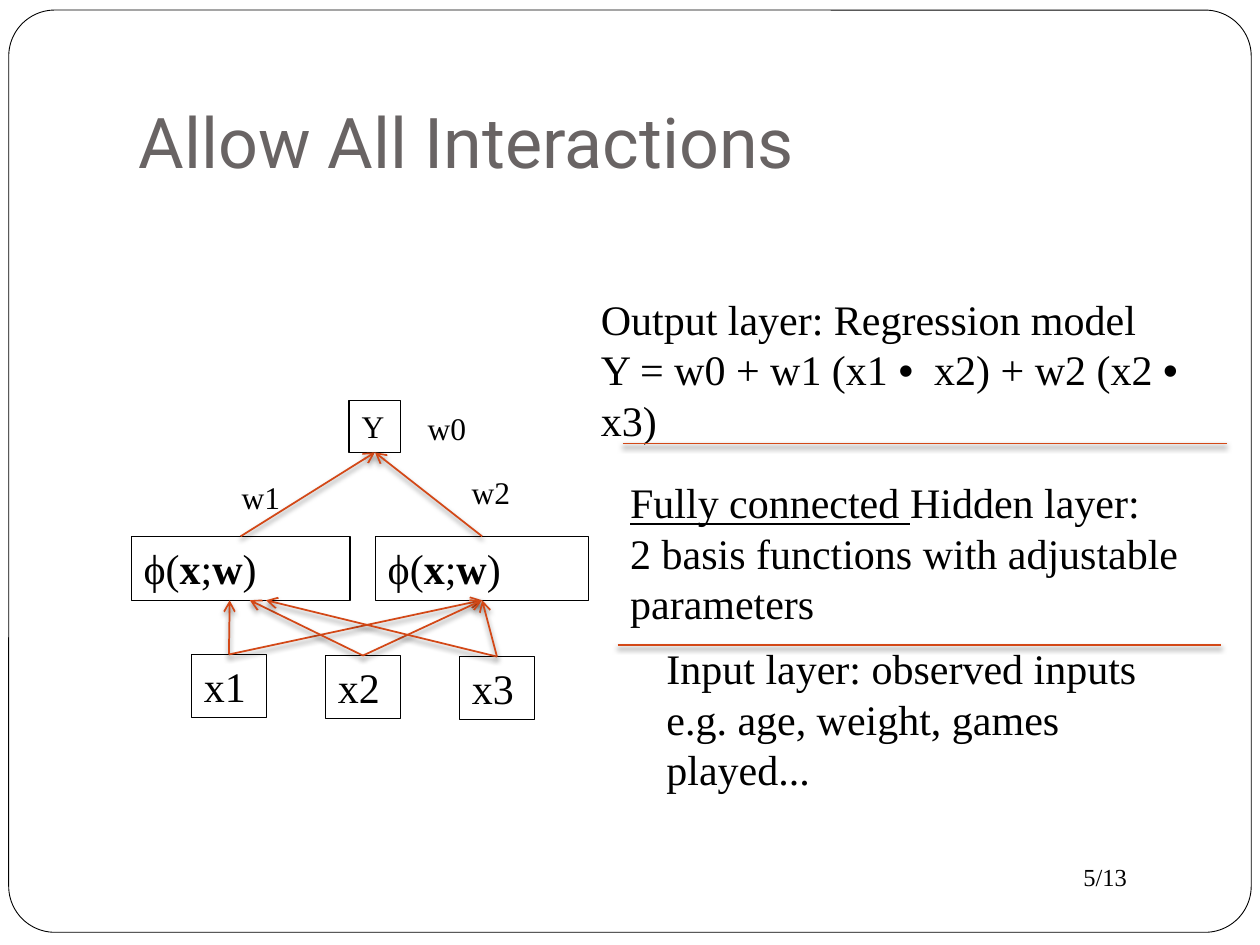
import pptx
import pptx.util
import pptx.dml.color
import pptx.enum.shapes
import pptx.enum.text
import pptx.oxml

Pt = pptx.util.Pt
SHAPE = pptx.enum.shapes.MSO_SHAPE
ANCHOR = pptx.enum.text.MSO_ANCHOR
NS = 'xmlns:a="http://schemas.openxmlformats.org/drawingml/2006/main"'
SHADOW = (f'<a:effectLst {NS}><a:outerShdw blurRad="38100" dist="25400" dir="5400000" '
          'rotWithShape="0"><a:srgbClr val="000000"><a:alpha val="50000"/></a:srgbClr>'
          '</a:outerShdw></a:effectLst>')
ARROW = f'<a:tailEnd {NS} type="arrow"/>'

BLACK, WHITE, GREY, ORANGE = "000000", "FFFFFF", "696464", "D34817"
SERIF = {"name": "Times New Roman", "size": Pt(24)}
SMALL = {"size": Pt(18)}
BOLD = {"bold": True}
BULLET = ("•", {"name": "Arial"})
PHI = [[("ϕ(", {}), ("x", BOLD), (";", {}), ("w", BOLD), (")", {})]]


def rgb(value):
    return pptx.dml.color.RGBColor.from_string(value)


def set_attrs(obj, values):
    for name, value in values.items():
        setattr(obj, name, value)


def write(tf, paragraphs, fmt=None, color=BLACK):
    """Each paragraph is a list of (text, format) runs; \\n is a line break."""
    for i, runs in enumerate(paragraphs):
        p = tf.paragraphs[0] if i == 0 else tf.add_paragraph()
        for text, own in runs:
            for j, part in enumerate(text.split("\n")):
                if j:
                    p.add_line_break()
                r = p.add_run()
                r.text = part
                set_attrs(r.font, {**SERIF, **(fmt or {}), **own})
                r.font.color.rgb = rgb(color)


def plain(*lines):
    return [[(line, {})] for line in lines]


def add_label(s, x, y, w, h, paragraphs, fmt=None):
    sp = s.shapes.add_textbox(Pt(x), Pt(y), Pt(w), Pt(h))
    sp.text_frame.word_wrap = True
    write(sp.text_frame, paragraphs, fmt)


def add_node(s, x, y, w, h, paragraphs, fmt=None):
    sp = s.shapes.add_textbox(Pt(x), Pt(y), Pt(w), Pt(h))
    set_attrs(sp.line, {"width": Pt(0.75)})
    sp.line.color.rgb = rgb(BLACK)
    sp.text_frame.word_wrap = True
    write(sp.text_frame, paragraphs, fmt)
    return sp


def add_line(s, x1, y1, x2, y2, arrow=False):
    c = s.shapes.add_connector(pptx.enum.shapes.MSO_CONNECTOR.STRAIGHT,
                               Pt(x1), Pt(y1), Pt(x2), Pt(y2))
    c.line.width = Pt(1)
    c.line.color.rgb = rgb(ORANGE)
    if arrow:
        c.line._get_or_add_ln().append(pptx.oxml.parse_xml(ARROW))
    c._element.spPr.append(pptx.oxml.parse_xml(SHADOW))
    return c


def add_arrow(s, source, target, end=None):
    """Arrow from a top middle to a bottom middle, or to a free end point."""
    c = add_line(s, 0, 0, *(end or (0, 0)), arrow=True)
    c.begin_connect(source, 0)
    if end is None:
        c.end_connect(target, 2)


def add_frame(s):
    sp = s.shapes.add_shape(SHAPE.ROUNDED_RECTANGLE, Pt(5), Pt(5.75), Pt(710), Pt(527))
    sp.adjustments[0] = 0.05
    sp.shadow.inherit = False
    sp.fill.solid()
    sp.fill.fore_color.rgb = rgb(WHITE)
    sp.line.width = Pt(0.5)
    sp.line.color.rgb = rgb(BLACK)
    # The frame goes behind the title
    s.shapes._spTree.insert(2, sp._element)


def add_title(s, text):
    sp = s.shapes.title
    set_attrs(sp, {"left": Pt(72), "top": Pt(21.6), "width": Pt(612), "height": Pt(90)})
    tf = sp.text_frame
    set_attrs(tf, {"margin_left": Pt(7.2), "margin_top": Pt(3.6), "margin_right": Pt(7.2),
                   "margin_bottom": Pt(7.2), "vertical_anchor": ANCHOR.BOTTOM,
                   "word_wrap": True})
    write(tf, plain(text), {"name": "Roboto", "size": Pt(40)}, GREY)
    tf.paragraphs[0].alignment = pptx.enum.text.PP_ALIGN.LEFT


def add_layer_notes(s):
    add_label(s, 336.25, 164.2, 376, 87, [[
        ("Output layer: Regression model \nY = w0 + w1 (x1 ", {}), BULLET,
        ("  x2) + w2 (x2 ", {}), BULLET, ("  x3)", {})]])
    add_label(s, 353, 269, 345, 94.5, [[
        ("Fully connected ", {"underline": True}),
        ("Hidden layer: \n2 basis functions with adjustable parameters", {})]])
    add_label(s, 373.75, 363.75, 297, 94.5,
              plain("Input layer: observed inputs", "e.g. age, weight, games played..."))
    # Dividers between the layers
    for x, y in ((356, 253.5), (353, 368.5)):
        add_line(s, x, y, x + 345, y)


def add_network(s):
    # Nodes of the three layers
    inputs = [add_node(s, 109.4 + 76.6 * i, 374 + 0.6 * i, 42.8, 36, plain(f"x{i + 1}"))
              for i in range(3)]
    hidden = [add_node(s, x, 306.5, w, 36.5, PHI) for x, w in ((75, 125), (214.5, 122))]
    output = add_node(s, 199.5, 229, 29.5, 29.5, plain("Y"), SMALL)

    # Every input feeds both hidden nodes; the left one takes spread-out ends
    for node, x in zip(inputs, (131.25, 142.75, 152)):
        add_arrow(s, node, hidden[0], (x, 343))
        add_arrow(s, node, hidden[1])
    for node in hidden:
        add_arrow(s, node, output)

    # Weights
    for text, x, y in (("w0", 237.3, 230), ("w1", 131, 269.5), ("w2", 262.5, 266.5)):
        add_label(s, x, y, 44, 29, plain(text), SMALL)


def main():
    prs = pptx.Presentation()
    set_attrs(prs, {"slide_width": Pt(720), "slide_height": Pt(540)})
    s = prs.slides.add_slide(prs.slide_layouts[5])
    add_frame(s)
    add_title(s, "Allow All Interactions")
    add_layer_notes(s)
    add_network(s)
    # Page number
    add_label(s, 612, 489, 72, 24.5, plain("5/13"), {"size": Pt(14)})
    prs.save("out.pptx")


if __name__ == "__main__":
    main()
